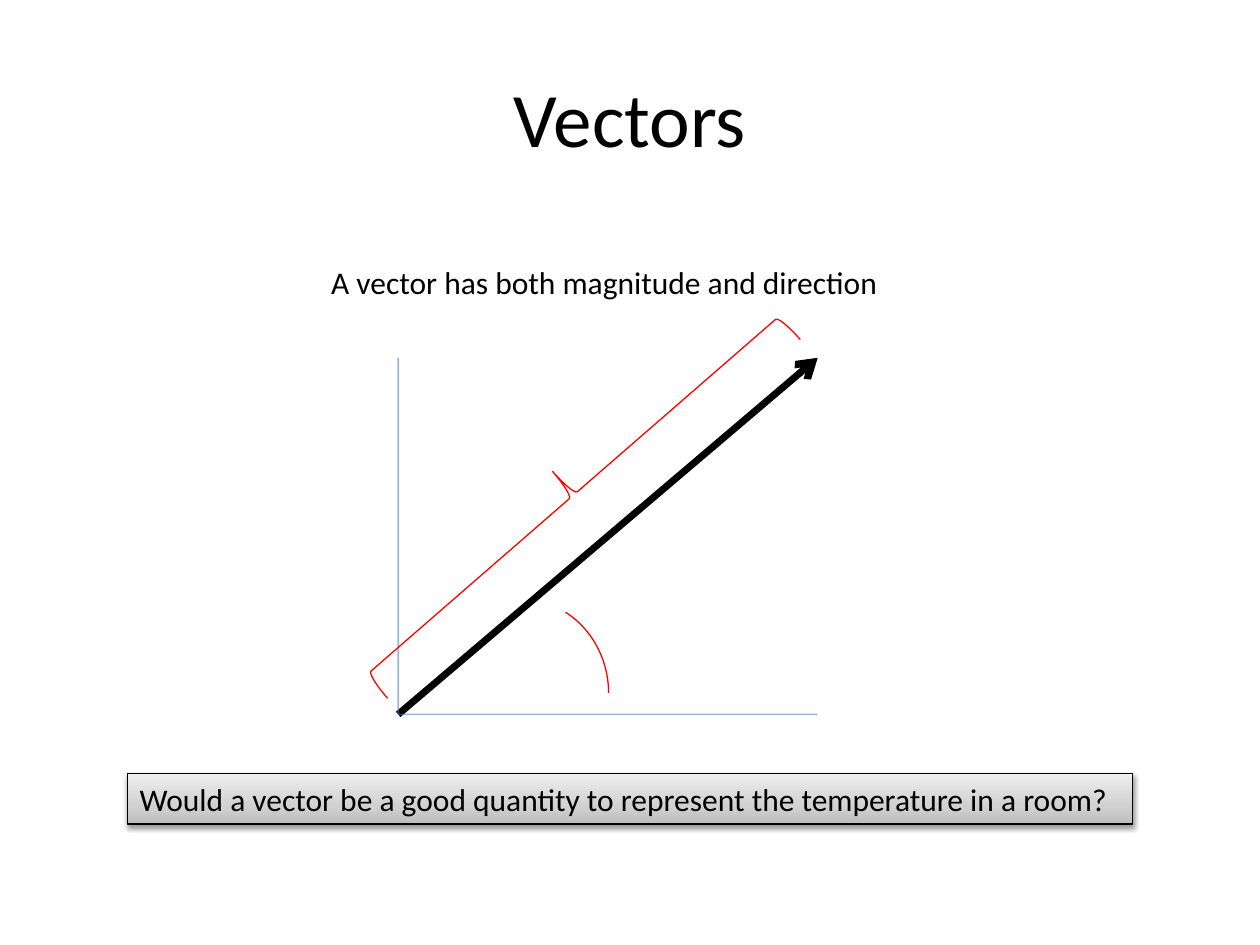
from lxml import etree
from pptx import Presentation
from pptx.dml.color import RGBColor
from pptx.enum.shapes import MSO_CONNECTOR as Link, MSO_SHAPE as Kind
from pptx.enum.text import MSO_ANCHOR as Anchor, PP_ALIGN as Align
from pptx.oxml import parse_xml
from pptx.oxml.ns import nsdecls, qn
from pptx.util import Inches, Pt

BLACK = RGBColor(0x00, 0x00, 0x00)
RED = RGBColor(0xFF, 0x00, 0x00)
BLUE = RGBColor(0x4B, 0x7E, 0xBC)
STOPS = {
    0: RGBColor(0xBD, 0xBD, 0xBD),
    35: RGBColor(0xD1, 0xD1, 0xD1),
    100: RGBColor(0xEE, 0xEE, 0xEE),
}


def write(shape, text, size=18, wrap=False, anchor=Anchor.TOP, align=Align.LEFT):
    frame = shape.text_frame
    for name, value in {"word_wrap": wrap, "vertical_anchor": anchor}.items():
        setattr(frame, name, value)
    para = frame.paragraphs[0]
    para.alignment = align
    run = para.add_run()
    run.text = text
    look = {"name": "Calibri", "size": Pt(size)}
    for name, value in look.items():
        setattr(run.font, name, value)
    run.font.color.rgb = BLACK


def label(slide, box, text, **look):
    shape = slide.shapes.add_textbox(*map(Inches, box))
    write(shape, text, **look)


def outline(slide, kind, box, color, turn=0):
    shape = slide.shapes.add_shape(kind, *map(Inches, box))
    shape.shadow.inherit = False
    shape.fill.background()
    shape.line.color.rgb = color
    shape.line.width = Pt(0.75)
    shape.rotation = turn
    return shape


def ray(slide, start, end, color, width):
    line = slide.shapes.add_connector(Link.STRAIGHT, *map(Inches, start + end))
    line.line.color.rgb = color
    line.line.width = Pt(width)
    etree.SubElement(line._element.spPr, qn("a:effectLst"))
    return line.line._get_or_add_ln()


def graph(slide, box):
    left, top, width, height = box
    base = (left, top + height)
    # Vector arrow
    ln = ray(slide, base, (left + width, top), BLACK, 4)
    etree.SubElement(ln, qn("a:tailEnd"), type="arrow")
    # Pale axes
    for end in ((left + width, top + height), (left, top)):
        ln = ray(slide, base, end, BLUE, 1)
        tint = ln.find(".//" + qn("a:srgbClr"))
        etree.SubElement(tint, qn("a:alpha"), val="57000")
    # Magnitude brace and direction arc
    outline(slide, Kind.RIGHT_BRACE, (left + 1.14, top - 1.08, 0.5, 4.34), RED, 229)
    arc = outline(slide, Kind.ARC, (left + 0.25, top + 1.91, 1.42, 1.5), RED)
    arc.adjustments[0] = 179.95
    arc.adjustments[1] = 0


def banner(slide, box, text):
    shape = outline(slide, Kind.RECTANGLE, box, BLACK)
    props = shape._element.spPr
    # Grey gradient, light at the top
    stops = "".join(
        f'<a:gs pos="{pos * 1000}"><a:srgbClr val="{color}"/></a:gs>'
        for pos, color in STOPS.items()
    )
    fill = parse_xml(
        f'<a:gradFill {nsdecls("a")} rotWithShape="1"><a:gsLst>{stops}</a:gsLst>'
        '<a:lin ang="16200000" scaled="1"/></a:gradFill>'
    )
    props.replace(props.find(qn("a:noFill")), fill)
    # Soft shadow below
    glow = etree.SubElement(
        props.find(qn("a:effectLst")), qn("a:outerShdw"),
        blurRad=str(Pt(3.1)), dist=str(Pt(1.6)), dir="5400000", rotWithShape="0",
    )
    tint = etree.SubElement(glow, qn("a:srgbClr"), val=str(BLACK))
    etree.SubElement(tint, qn("a:alpha"), val="38000")
    write(shape, text)


def main():
    deck = Presentation()
    deck.slide_width, deck.slide_height = Inches(10), Inches(7.5)
    slide = deck.slides.add_slide(deck.slide_layouts[6])
    label(slide, (0.5, 0.3, 9, 1.25), "Vectors", size=44, wrap=True,
          anchor=Anchor.MIDDLE, align=Align.CENTER)
    graph(slide, (3.16, 2.84, 3.33, 2.83))
    label(slide, (2.53, 2.04, 4.59, 0.4), "A vector has both magnitude and direction")
    banner(slide, (1.01, 6.14, 7.98, 0.4),
           "Would a vector be a good quantity to represent the temperature in a room?")
    deck.save("out.pptx")


if __name__ == "__main__":
    main()
